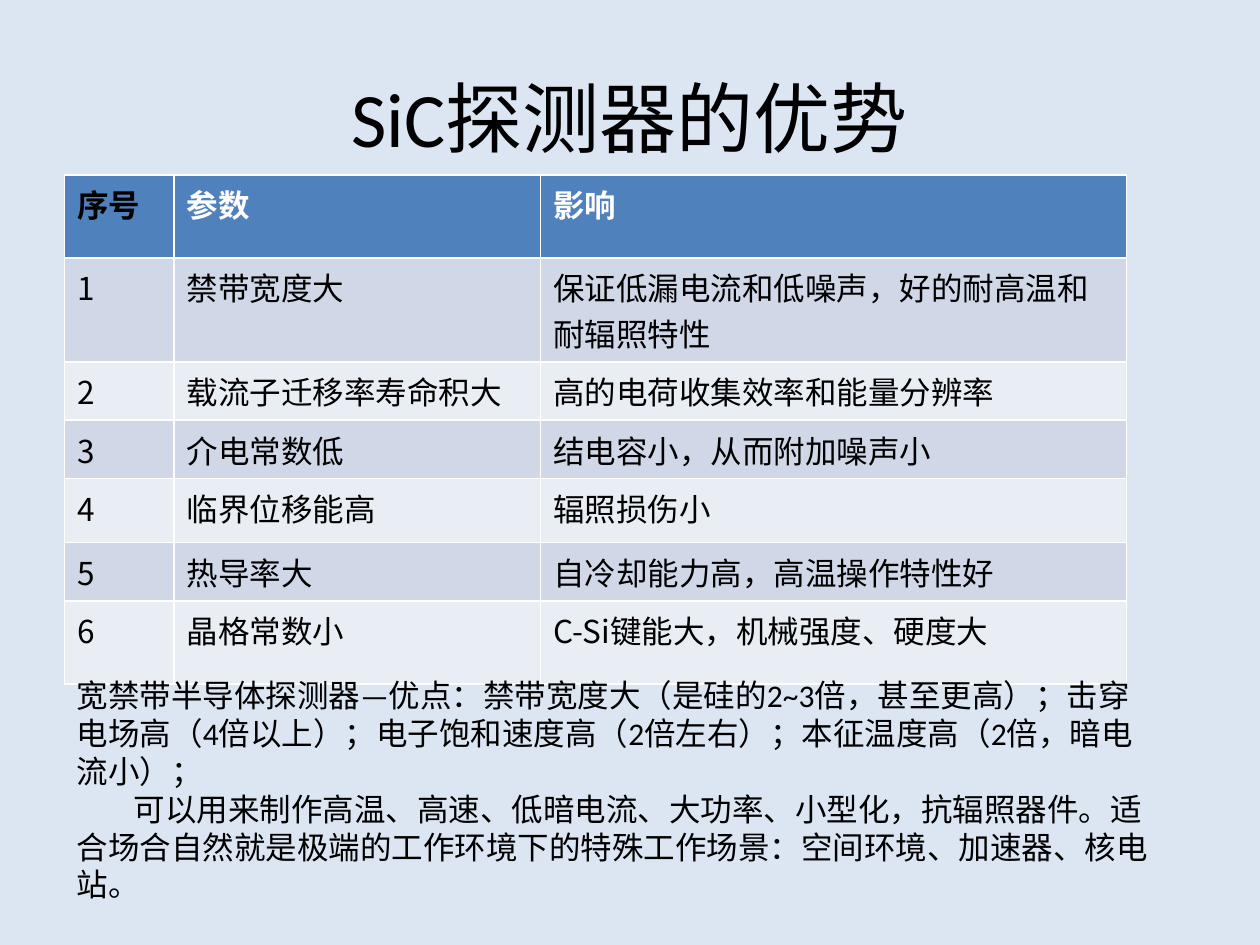
from pptx import Presentation
from pptx.dml.color import RGBColor
from pptx.enum.text import MSO_ANCHOR, PP_ALIGN
from pptx.oxml.ns import qn
from pptx.util import Pt

MIDDLE, CENTER = MSO_ANCHOR.MIDDLE, PP_ALIGN.CENTER
TITLE_ONLY = 5
COLORS = {"back": "DCE6F2", "head": "4F81BD", "odd": "D0D8E8",
          "even": "E9EDF4", "ink": "000000", "white": "FFFFFF"}
LATIN, HAN = "Calibri", "Noto Sans CJK SC"

COLS = [62.6, 209.5, 334.8]
HEIGHTS = [47.5, 31.7, 31.7, 32.4, 36.7, 31.7, 47.5]
HEADS = ["序号", "参数", "影响"]
TRAITS = [
    ("禁带宽度大", "保证低漏电流和低噪声，好的耐高温和耐辐照特性"),
    ("载流子迁移率寿命积大", "高的电荷收集效率和能量分辨率"),
    ("介电常数低", "结电容小，从而附加噪声小"),
    ("临界位移能高", "辐照损伤小"),
    ("热导率大", "自冷却能力高，高温操作特性好"),
    ("晶格常数小", "C-Si键能大，机械强度、硬度大"),
]
NOTES = [
    "宽禁带半导体探测器—优点：禁带宽度大（是硅的2~3倍，甚至更高）；击穿电场高"
    "（4倍以上）；电子饱和速度高（2倍左右）；本征温度高（2倍，暗电流小）；",
    "可以用来制作高温、高速、低暗电流、大功率、小型化，抗辐照器件。适合场合自然就是"
    "极端的工作环境下的特殊工作场景：空间环境、加速器、核电站。",
]


def rgb(name):
    return RGBColor.from_string(COLORS[name])


def style(para, size, face, color="ink", bold=False):
    """Format all runs, with one face for Latin and East Asian text."""
    for run in para.runs:
        font = run.font
        font.size, font.name, font.bold = Pt(size), face, bold
        font.color.rgb = rgb(color)
        east = run._r.get_or_add_rPr().makeelement(qn("a:ea"), {"typeface": face})
        run._r.rPr.find(qn("a:latin")).addnext(east)


def add_title(slide, x, y, w, h):
    title = slide.shapes.title
    title.left, title.top, title.width, title.height = map(Pt, (x, y, w, h))
    frame = title.text_frame
    frame.text = "SiC探测器的优势"
    frame.vertical_anchor = MIDDLE
    para = frame.paragraphs[0]
    para.alignment = CENTER
    style(para, 44, LATIN)


def add_traits(slide, x, y):
    rows = [HEADS] + [(str(n), *trait) for n, trait in enumerate(TRAITS, 1)]
    box = map(Pt, (x, y, sum(COLS), sum(HEIGHTS)))
    table = slide.shapes.add_table(len(rows), len(COLS), *box).table
    for col, width in zip(table.columns, COLS):
        col.width = Pt(width)
    for r, texts in enumerate(rows):
        table.rows[r].height = Pt(HEIGHTS[r])
        fill = "head" if r == 0 else "odd" if r % 2 else "even"
        for c, text in enumerate(texts):
            cell = table.cell(r, c)
            cell.text = text
            cell.fill.solid()
            cell.fill.fore_color.rgb = rgb(fill)
            color = "white" if r == 0 and c > 0 else "ink"
            style(cell.text_frame.paragraphs[0], 18, HAN, color, r == 0)


def add_notes(slide, x, y, w, h):
    frame = slide.shapes.add_textbox(*map(Pt, (x, y, w, h))).text_frame
    frame.word_wrap = True
    frame.text = "\n".join(NOTES)
    for para in frame.paragraphs:
        style(para, 18, LATIN)
    frame.paragraphs[1]._p.get_or_add_pPr().set("indent", str(Pt(32.5)))


def main():
    deck = Presentation()
    deck.slide_width, deck.slide_height = Pt(720), Pt(540)
    slide = deck.slides.add_slide(deck.slide_layouts[TITLE_ONLY])
    fill = slide.background.fill
    fill.solid()
    fill.fore_color.rgb = rgb("back")
    add_title(slide, 36, 21.6, 648, 90)
    add_traits(slide, 36.9, 100)
    add_notes(slide, 36.9, 383, 629, 138)
    deck.save("out.pptx")


if __name__ == "__main__":
    main()
